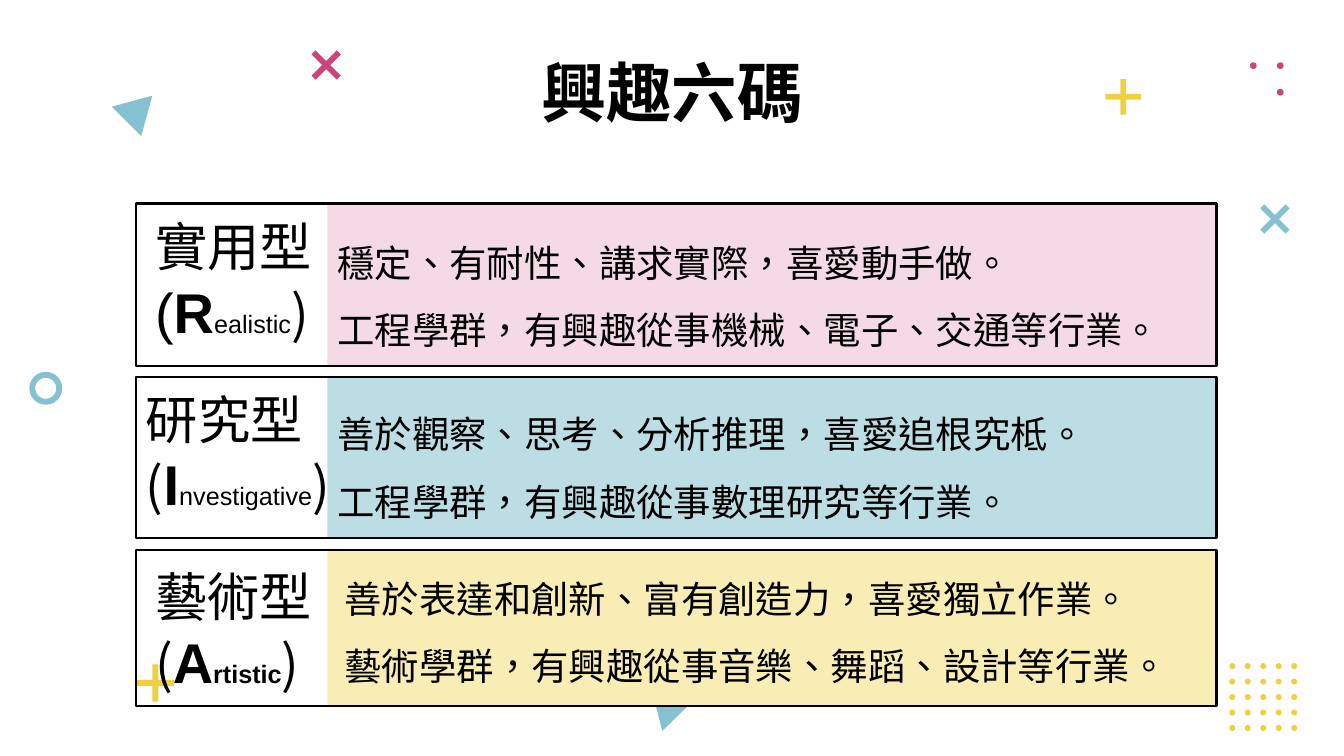
from lxml.etree import SubElement
from pptx import Presentation
from pptx.dml.color import RGBColor
from pptx.enum.lang import MSO_LANGUAGE_ID
from pptx.enum.shapes import MSO_SHAPE
from pptx.enum.text import MSO_ANCHOR, MSO_AUTO_SIZE, PP_ALIGN
from pptx.oxml.ns import qn
from pptx.util import Cm, Pt

BLACK = RGBColor(0x00, 0x00, 0x00)
YELLOW = RGBColor(0xEE, 0xD1, 0x43)
TEAL = RGBColor(0x85, 0xC1, 0xD0)
PINK = RGBColor(0xC9, 0x45, 0x7C)
PALE_PINK = RGBColor(0xF4, 0xDA, 0xE5)
PALE_TEAL = RGBColor(0xBD, 0xDD, 0xE5)
PALE_YELLOW = RGBColor(0xF8, 0xED, 0xB4)
CHINESE = "Noto Sans CJK SC"
LATIN = "Arial"

FRAME_LEFT, FRAME_WIDTH = 3.43, 27.23
PANEL_LEFT, PANEL_WIDTH = 8.25, 22.41
FIRST_ROW, ROW_PITCH = 5.13, 4.36

INTEREST_TYPES = [
    {
        "height": 4.09, "colour": PALE_PINK,
        "label_box": (3.66, 5.28, 5.64, 3.56), "name": "實用型",
        "code": [("(", 40, LATIN, False), ("R", 40, LATIN, True),
                 ("ealistic", 18, LATIN, False), (")", 37.3, CHINESE, False)],
        "text_box": (8.25, 5.36, 21.39, 3.48),
        "text": ["穩定、有耐性、講求實際，喜愛動手做。",
                 "工程學群，有興趣從事機械、電子、交通等行業。"],
    },
    {
        "height": 4.06, "colour": PALE_TEAL,
        "label_box": (3.43, 9.63, 5.16, 3.56), "name": "研究型",
        "code": [("(", 37.3, CHINESE, False), ("I", 40, LATIN, True),
                 ("nvestigative", 18, LATIN, False), (")", 37.3, CHINESE, False)],
        "text_box": (8.25, 9.68, 19.48, 3.48),
        "text": ["善於觀察、思考、分析推理，喜愛追根究柢。",
                 "工程學群，有興趣從事數理研究等行業。"],
    },
    {
        "height": 3.95, "colour": PALE_YELLOW,
        "label_box": (3.66, 14.1, 5.16, 3.56), "name": "藝術型",
        "code": [("(", 37.3, CHINESE, False), ("A", 40, LATIN, True),
                 ("rtistic", 18, LATIN, True), (")", 37.3, CHINESE, False)],
        "text_box": (8.43, 13.82, 21.39, 3.48),
        "text": ["善於表達和創新、富有創造力，喜愛獨立作業。",
                 "藝術學群，有興趣從事音樂、舞蹈、設計等行業。"],
    },
]


class SlideBuilder:
    """Hold the current slide and draw its elements in one style."""

    def __init__(self, slide):
        self.slide = slide

    def style_font(self, font, size, name=CHINESE, bold=False):
        font.size = Pt(size)
        font.bold = bold
        font.color.rgb = BLACK
        font.name = name
        font.language_id = MSO_LANGUAGE_ID.TRADITIONAL_CHINESE
        SubElement(font._element, qn("a:ea"), typeface=CHINESE)

    def paint(self, shape, fill=None, line=None):
        shape.shadow.inherit = False
        if fill is None:
            shape.fill.background()
        else:
            shape.fill.solid()
            shape.fill.fore_color.rgb = fill
        if line is None:
            shape.line.fill.background()
        else:
            shape.line.color.rgb = line
            shape.line.width = Pt(1.5)

    def shape(self, kind, left, top, width, height, fill=None, line=None):
        shape = self.slide.shapes.add_shape(
            kind, Cm(left), Cm(top), Cm(width), Cm(height))
        self.paint(shape, fill, line)
        return shape

    def dot(self, left, top, size, colour):
        self.shape(MSO_SHAPE.OVAL, left, top, size, size, colour)

    def cross(self, centre_x, centre_y, size, colour, rotation=0):
        shape = self.shape(MSO_SHAPE.CROSS, centre_x - size / 2,
                           centre_y - size / 2, size, size, colour)
        shape.adjustments[0] = 0.42
        shape.rotation = rotation

    def ring(self, left, top, size, colour):
        shape = self.shape(MSO_SHAPE.DONUT, left, top, size, size, colour)
        shape.adjustments[0] = 0.18

    def triangle(self, corners, colour):
        points = [(Cm(x), Cm(y)) for x, y in corners]
        builder = self.slide.shapes.build_freeform(*points[0])
        builder.add_line_segments(points[1:], close=True)
        self.paint(builder.convert_to_shape(), colour)

    def title(self, text):
        title = self.slide.shapes.title
        title.left, title.top = Cm(2.67), Cm(1.24)
        title.width, title.height = Cm(28.52), Cm(2.13)
        frame = title.text_frame
        frame.text = text
        frame.auto_size = MSO_AUTO_SIZE.NONE
        frame.vertical_anchor = MSO_ANCHOR.MIDDLE
        frame.margin_left = frame.margin_right = Cm(0.25)
        frame.margin_top = frame.margin_bottom = Cm(0.25)
        paragraph = frame.paragraphs[0]
        paragraph.alignment = PP_ALIGN.CENTER
        self.style_font(paragraph.font, 46.7, bold=True)

    def text_frame(self, box, wrap):
        frame = self.slide.shapes.add_textbox(*map(Cm, box)).text_frame
        frame.word_wrap = wrap
        frame.auto_size = MSO_AUTO_SIZE.SHAPE_TO_FIT_TEXT
        return frame

    def label(self, box, name, code):
        frame = self.text_frame(box, True)
        frame.text = name
        self.style_font(frame.paragraphs[0].font, 37.3)
        paragraph = frame.add_paragraph()
        for text, size, font_name, bold in code:
            run = paragraph.add_run()
            run.text = text
            self.style_font(run.font, size, font_name, bold)

    def description(self, box, lines):
        frame = self.text_frame(box, False)
        frame.text = "\n".join(lines)
        for paragraph in frame.paragraphs:
            paragraph.line_spacing = 1.5
            self.style_font(paragraph.font, 26.7)

    def decorations(self):
        for column in range(5):
            for row in range(5):
                self.dot(30.98 + 0.39 * column, 16.71 + 0.39 * row, 0.15, YELLOW)
        for left, top in [(31.5, 1.57), (32.18, 1.57), (32.18, 2.24)]:
            self.dot(left, top, 0.17, PINK)
        self.cross(3.92, 17.21, 0.94, YELLOW)
        self.cross(28.31, 2.44, 0.9, YELLOW)
        self.cross(32.13, 5.52, 0.9, TEAL, 45)
        self.cross(8.22, 1.64, 0.9, PINK, 45)
        self.ring(0.74, 9.37, 0.83, TEAL)
        self.triangle([(16.43, 17.4), (16.69, 18.42), (17.45, 17.68)], TEAL)
        self.triangle([(3.84, 2.41), (2.82, 2.69), (3.56, 3.43)], TEAL)

    def interest_row(self, top, interest):
        height = interest["height"]
        self.shape(MSO_SHAPE.RECTANGLE, PANEL_LEFT, top, PANEL_WIDTH, height,
                   fill=interest["colour"])
        self.shape(MSO_SHAPE.RECTANGLE, FRAME_LEFT, top, FRAME_WIDTH, height,
                   line=BLACK)
        self.label(interest["label_box"], interest["name"], interest["code"])
        self.description(interest["text_box"], interest["text"])


def main():
    presentation = Presentation()
    presentation.slide_width = Cm(33.87)
    presentation.slide_height = Cm(19.05)
    slide = presentation.slides.add_slide(presentation.slide_layouts[5])
    builder = SlideBuilder(slide)
    builder.title("興趣六碼")
    builder.decorations()
    for index, interest in enumerate(INTEREST_TYPES):
        builder.interest_row(FIRST_ROW + ROW_PITCH * index, interest)
    presentation.save("out.pptx")


if __name__ == "__main__":
    main()
